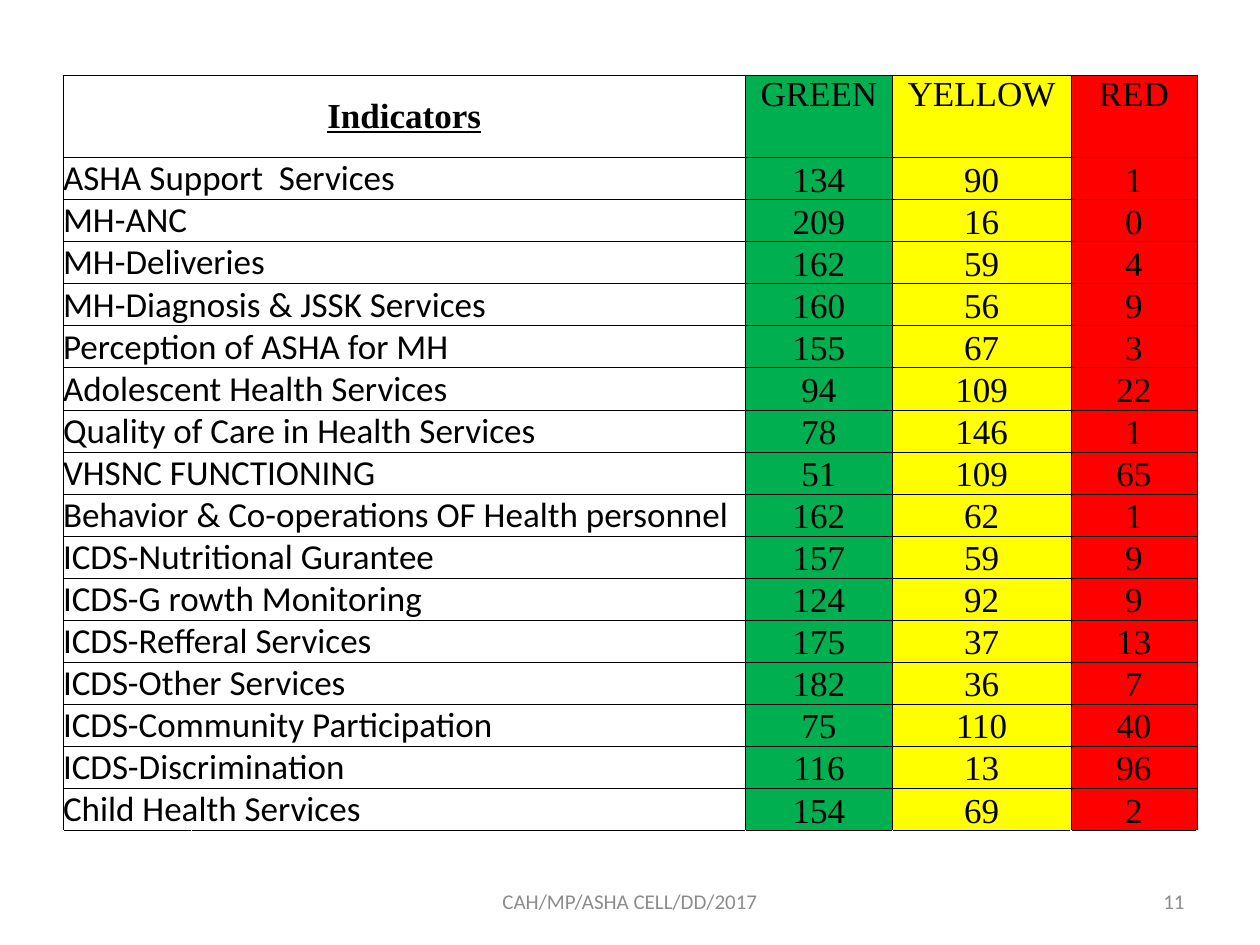
from lxml import etree
from pptx import Presentation
from pptx.dml.color import RGBColor
from pptx.enum import text
from pptx.oxml import ns
from pptx.util import Pt

THEME = {
    "ink": RGBColor(0x00, 0x00, 0x00),
    "footer": RGBColor(0x8C, 0x8C, 0x8C),
    "ratings": [
        RGBColor(0x00, 0xB0, 0x50),
        RGBColor(0xFF, 0xFF, 0x00),
        RGBColor(0xFF, 0x00, 0x00),
    ],
    "label_font": "Calibri",
    "number_font": "Times New Roman",
    "table_size": Pt(20),
    "footer_size": Pt(12),
    "border": Pt(0.5),
}

RATINGS = ["GREEN", "YELLOW", "RED"]
INDICATORS = [
    ("ASHA Support  Services", 134, 90, 1),
    ("MH-ANC", 209, 16, 0),
    ("MH-Deliveries", 162, 59, 4),
    ("MH-Diagnosis & JSSK Services", 160, 56, 9),
    ("Perception of ASHA for MH", 155, 67, 3),
    ("Adolescent Health Services", 94, 109, 22),
    ("Quality of Care in Health Services", 78, 146, 1),
    ("VHSNC FUNCTIONING", 51, 109, 65),
    ("Behavior & Co-operations OF Health personnel", 162, 62, 1),
    ("ICDS-Nutritional Gurantee", 157, 59, 9),
    ("ICDS-G rowth Monitoring", 124, 92, 9),
    ("ICDS-Refferal Services", 175, 37, 13),
    ("ICDS-Other Services", 182, 36, 7),
    ("ICDS-Community Participation", 75, 110, 40),
    ("ICDS-Discrimination", 116, 13, 96),
    ("Child Health Services", 154, 69, 2),
]
COLUMN_WIDTHS = [73.4, 316.6, 84, 102, 72]
HEADER_HEIGHT, ROW_HEIGHT = 46.8, 24


def write(text_frame, content, font_name, size, color, alignment):
    text_frame.text = content
    paragraph = text_frame.paragraphs[0]
    paragraph.alignment = alignment
    font = paragraph.runs[0].font
    font.name, font.size, font.color.rgb = font_name, size, color
    return font


def add_borders(cell, sides):
    """Draw thin lines on the given sides; must run before the cell is filled."""
    properties = cell._tc.get_or_add_tcPr()
    for side in sides:
        line = etree.SubElement(properties, ns.qn(f"a:ln{side}"), w=str(THEME["border"]))
        fill = etree.SubElement(line, ns.qn("a:solidFill"))
        etree.SubElement(fill, ns.qn("a:srgbClr"), val=str(THEME["ink"]))


presentation = Presentation()
presentation.slide_width, presentation.slide_height = Pt(720), Pt(540)
slide = presentation.slides.add_slide(presentation.slide_layouts[6])

# Footer and slide number
for content, left, width, alignment in [
    ("CAH/MP/ASHA CELL/DD/2017", 246, 228, text.PP_ALIGN.CENTER),
    ("11", 516, 168, text.PP_ALIGN.RIGHT),
]:
    box = slide.shapes.add_textbox(Pt(left), Pt(500.5), Pt(width), Pt(28.75))
    box.text_frame.word_wrap = True
    box.text_frame.vertical_anchor = text.MSO_ANCHOR.MIDDLE
    write(box.text_frame, content, THEME["label_font"], THEME["footer_size"],
          THEME["footer"], alignment)

# Indicator table: header, one row per indicator, and an open closing row
row_count = len(INDICATORS) + 2
table = slide.shapes.add_table(
    row_count, len(COLUMN_WIDTHS), Pt(36), Pt(43.2), Pt(sum(COLUMN_WIDTHS)),
    Pt(HEADER_HEIGHT + ROW_HEIGHT * (row_count - 1)),
).table
table.first_row = table.horz_banding = False
for column, width in zip(table.columns, COLUMN_WIDTHS):
    column.width = Pt(width)
for index, row in enumerate(table.rows):
    row.height = Pt(ROW_HEIGHT if index else HEADER_HEIGHT)
    for cell in row.cells:
        cell.margin_left = cell.margin_right = cell.margin_top = cell.margin_bottom = 0
        add_borders(cell, "T" if index == row_count - 1 else "LRTB")
        cell.fill.background()

for index, (label, *values) in enumerate([("Indicators", *RATINGS), *INDICATORS]):
    is_header = index == 0
    label_cell = table.cell(index, 0)
    label_cell.merge(table.cell(index, 1))
    label_cell.vertical_anchor = text.MSO_ANCHOR.MIDDLE if is_header else text.MSO_ANCHOR.BOTTOM
    font = write(
        label_cell.text_frame, label,
        THEME["number_font"] if is_header else THEME["label_font"],
        THEME["table_size"], THEME["ink"],
        text.PP_ALIGN.CENTER if is_header else text.PP_ALIGN.LEFT,
    )
    font.bold = font.underline = is_header

    for column, (value, color) in enumerate(zip(values, THEME["ratings"]), start=2):
        cell = table.cell(index, column)
        cell.vertical_anchor = text.MSO_ANCHOR.TOP if is_header else text.MSO_ANCHOR.BOTTOM
        cell.fill.solid()
        cell.fill.fore_color.rgb = color
        write(cell.text_frame, str(value), THEME["number_font"], THEME["table_size"],
              THEME["ink"], text.PP_ALIGN.CENTER)

presentation.save("out.pptx")
